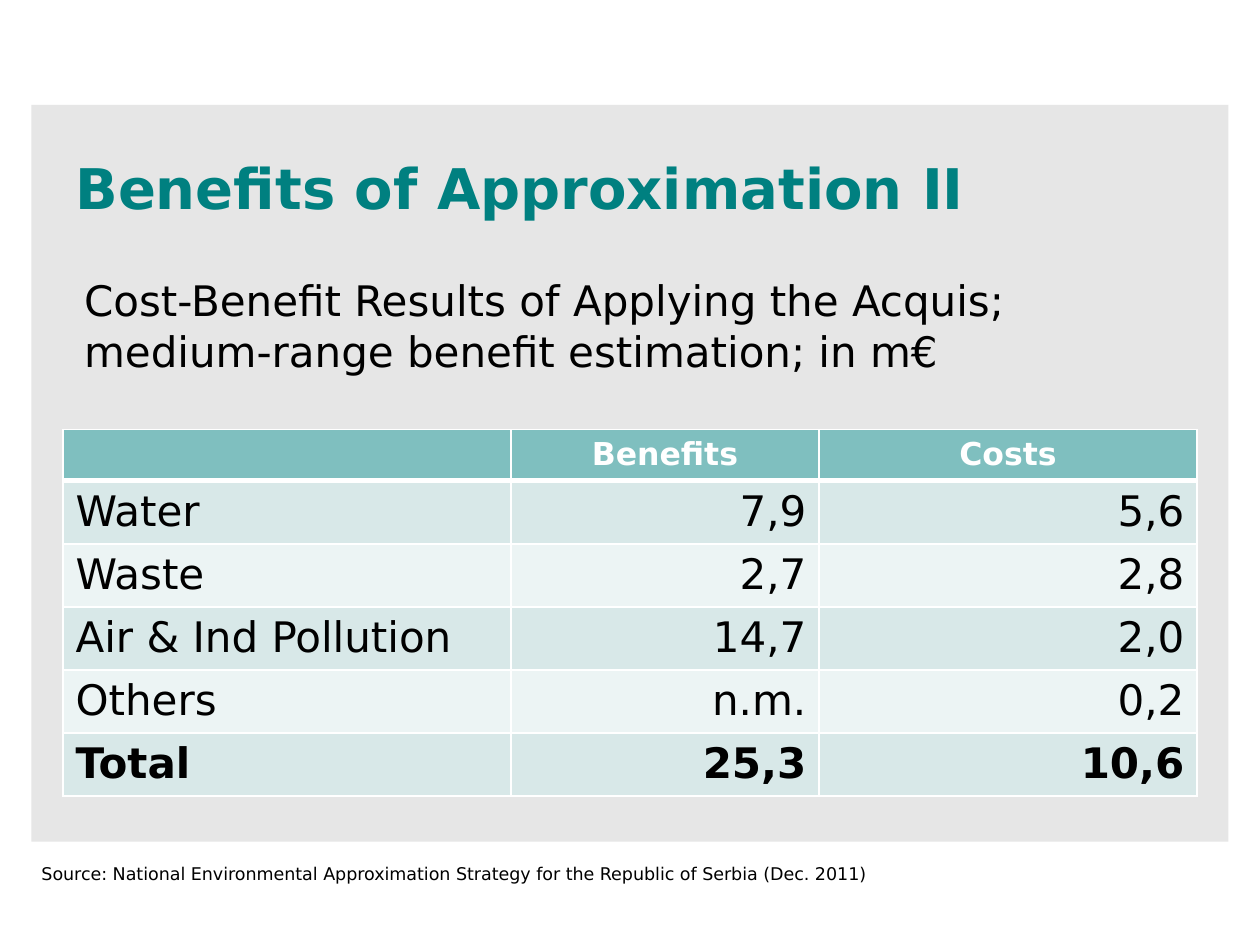
"""Build the cost-benefit slide on approximation."""
from lxml.etree import SubElement
from pptx import Presentation
from pptx.dml.color import RGBColor
from pptx.enum.shapes import MSO_SHAPE
from pptx.enum.text import MSO_ANCHOR, PP_ALIGN
from pptx.oxml.ns import qn
from pptx.util import Pt

COLORS = {
    "panel": "E6E6E6",
    "title": "008080",
    "text": "000000",
    "white": "FFFFFF",
    "header": "7FBFBF",
    "odd": "D8E8E8",
    "even": "ECF4F4",
}
ROWS = [
    ("", "Benefits", "Costs"),
    ("Water", "7,9", "5,6"),
    ("Waste", "2,7", "2,8"),
    ("Air & Ind Pollution", "14,7", "2,0"),
    ("Others", "n.m.", "0,2"),
    ("Total", "25,3", "10,6"),
]


class SlideBuilder:
    font = "DejaVu Sans"

    def __init__(self, slide):
        self.slide = slide

    def color(self, name):
        return RGBColor.from_string(COLORS[name])

    def set_text(self, text_frame, text, size, color="text", bold=False, align=PP_ALIGN.LEFT):
        text_frame.text = text
        paragraph = text_frame.paragraphs[0]
        paragraph.alignment = align
        for run in paragraph.runs:
            run.font.name = self.font
            run.font.size = Pt(size)
            run.font.bold = bold
            run.font.color.rgb = self.color(color)

    def panel(self, left, top, width, height):
        shape = self.slide.shapes.add_shape(
            MSO_SHAPE.RECTANGLE, Pt(left), Pt(top), Pt(width), Pt(height))
        shape.shadow.inherit = False
        shape.fill.solid()
        shape.fill.fore_color.rgb = self.color("panel")
        shape.line.fill.background()

    def text(self, left, top, width, height, text, size, anchor=MSO_ANCHOR.TOP, **style):
        shape = self.slide.shapes.add_textbox(Pt(left), Pt(top), Pt(width), Pt(height))
        shape.text_frame.word_wrap = True
        shape.text_frame.vertical_anchor = anchor
        self.set_text(shape.text_frame, text, size, **style)

    def border(self, cell, side, width):
        properties = cell._tc.get_or_add_tcPr()
        line = SubElement(properties, qn(f"a:ln{side}"), w=str(Pt(width)))
        fill = SubElement(line, qn("a:solidFill"))
        SubElement(fill, qn("a:srgbClr"), val=COLORS["white"])

    def cell(self, cell, text, row, column):
        header, total = row == 0, row == len(ROWS) - 1
        thick_side = {0: "B", 1: "T"}.get(row)
        for side in "LRTB":
            self.border(cell, side, 3 if side == thick_side else 1)
        cell.fill.solid()
        cell.fill.fore_color.rgb = self.color(
            "header" if header else "odd" if row % 2 else "even")
        align = PP_ALIGN.CENTER if header else PP_ALIGN.RIGHT if column else PP_ALIGN.LEFT
        self.set_text(cell.text_frame, text, 18 if header else 24,
                      "white" if header else "text", header or total, align)

    def table(self, left, top, widths, header_height, row_height, rows):
        heights = [header_height] + [row_height] * (len(rows) - 1)
        table = self.slide.shapes.add_table(
            len(rows), len(widths), Pt(left), Pt(top),
            Pt(sum(widths)), Pt(sum(heights))).table
        for column, width in zip(table.columns, widths):
            column.width = Pt(width)
        for row, (height, values) in enumerate(zip(heights, rows)):
            table.rows[row].height = Pt(height)
            for column, value in enumerate(values):
                self.cell(table.cell(row, column), value, row, column)


def main():
    presentation = Presentation()
    presentation.slide_width, presentation.slide_height = Pt(720), Pt(540)
    builder = SlideBuilder(presentation.slides.add_slide(presentation.slide_layouts[6]))
    builder.panel(18, 60, 684, 421)
    builder.text(36, 82, 648, 50.4, "Benefits of Approximation II", 32,
                 MSO_ANCHOR.MIDDLE, color="title", bold=True)
    builder.table(36, 245.5, [256, 176, 216], 29.2, 35.1, ROWS)
    builder.text(41, 153.4, 643, 65.5,
                 "Cost-Benefit Results of Applying the Acquis; "
                 "medium-range benefit estimation; in m€", 24)
    builder.text(16.6, 489.6, 680, 19.4,
                 "Source: National Environmental Approximation Strategy "
                 "for the Republic of Serbia (Dec. 2011)", 10)
    presentation.save("out.pptx")


if __name__ == "__main__":
    main()
